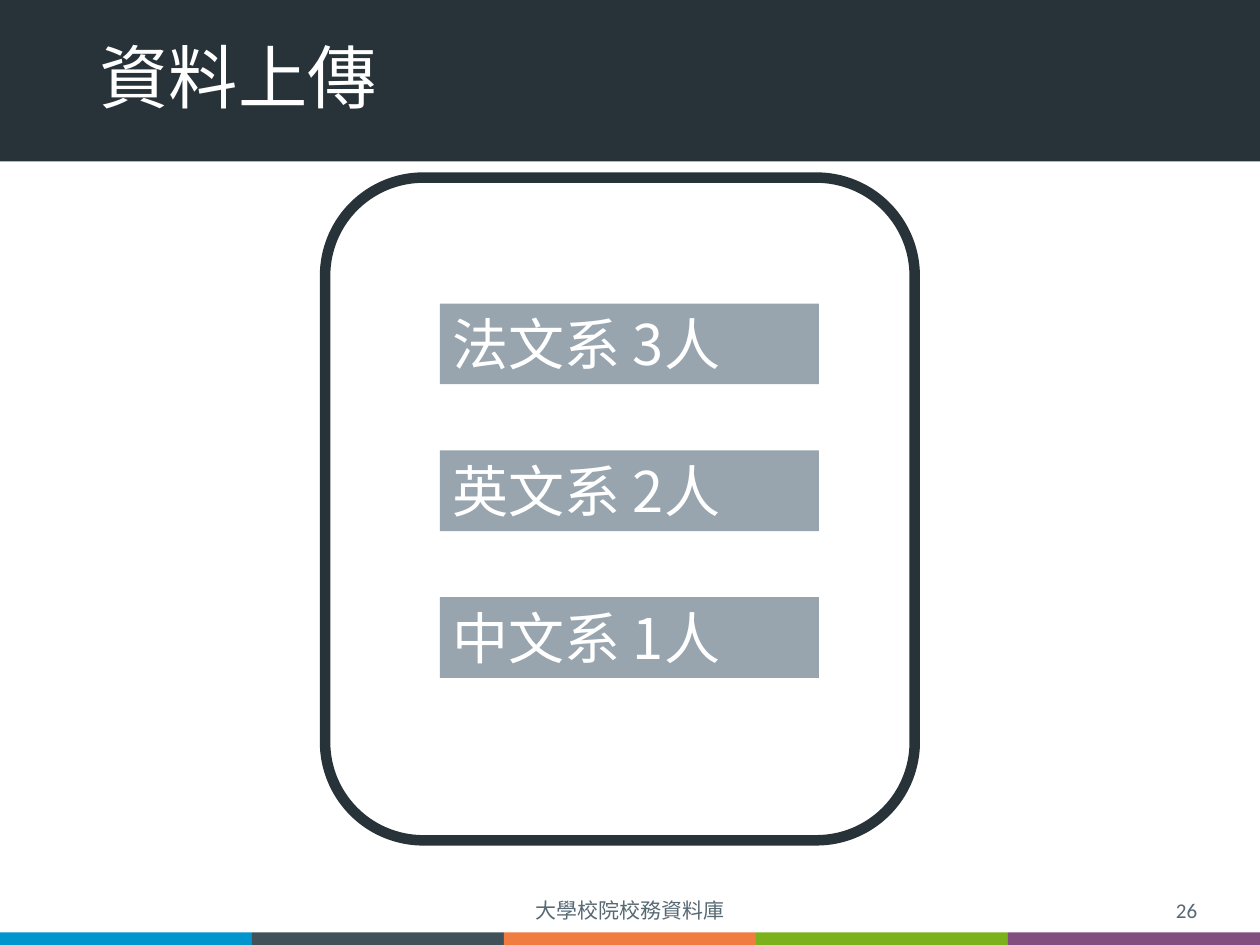
from lxml import etree
from pptx import Presentation
from pptx import util as u
from pptx.dml.color import RGBColor
from pptx.enum import shapes, text
from pptx.oxml.ns import qn

WHITE = RGBColor(0xFF, 0xFF, 0xFF)
DARK = RGBColor(0x27, 0x33, 0x39)
SLATE = RGBColor(0x32, 0x4D, 0x5E)
FOOTER_GREY = RGBColor(0x57, 0x69, 0x73)
STRIPE_COLOURS = [
    RGBColor(0x00, 0x95, 0xCD),
    RGBColor(0x40, 0x51, 0x5A),
    RGBColor(0xF1, 0x7C, 0x3F),
    RGBColor(0x7B, 0xB2, 0x1B),
    RGBColor(0x81, 0x4E, 0x7E),
]
CJK_FONT = "Noto Sans CJK SC"
WIDTH, HEIGHT = 10, 7.5
DEPARTMENTS = ["法文系 3人", "英文系 2人", "中文系 1人"]

TITLE_FORMAT = {"size": u.Pt(39.6), "name": "Calibri"}
FOOTER_FORMAT = {"size": u.Pt(12), "name": "Calibri"}
LABEL_FORMAT = {"size": u.Pt(32), "name": CJK_FONT}


def inches(box):
    return [u.Inches(length) for length in box]


def write(frame, words, font_format, colour, align, anchor):
    """Fill a text frame with one formatted paragraph."""
    frame.word_wrap = True
    frame.vertical_anchor = anchor
    paragraph = frame.paragraphs[0]
    paragraph.alignment = align
    run = paragraph.add_run()
    run.text = words
    for key, value in font_format.items():
        setattr(run.font, key, value)
    run.font.color.rgb = colour
    east_asian = etree.SubElement(run.font._element, qn("a:ea"))
    east_asian.set("typeface", CJK_FONT)
    return paragraph


def add_block(slide, box, colour, alpha=None):
    block = slide.shapes.add_shape(shapes.MSO_SHAPE.RECTANGLE, *inches(box))
    block.shadow.inherit = False
    block.line.fill.background()
    block.fill.solid()
    block.fill.fore_color.rgb = colour
    if alpha is not None:
        fill_colour = block._element.spPr.find(qn("a:solidFill"))[0]
        etree.SubElement(fill_colour, qn("a:alpha")).set("val", str(alpha * 1000))
    return block


def header(slide, box):
    left, top, width, height = box
    add_block(slide, box, DARK)
    title = slide.shapes.title
    slide.shapes._spTree.append(title._element)  # in front of the band
    title_box = inches((left + 0.069 * width, top + 0.28, 0.862 * width, 0.74))
    for side, length in zip(("left", "top", "width", "height"), title_box):
        setattr(title, side, length)
    line = write(title.text_frame, "資料上傳", TITLE_FORMAT, WHITE,
                 text.PP_ALIGN.LEFT, text.MSO_ANCHOR.MIDDLE)
    line.line_spacing = 0.9


def footer(slide, box):
    left, top, width, height = box
    stripe_width = width / len(STRIPE_COLOURS)
    for column, colour in enumerate(STRIPE_COLOURS):
        add_block(slide, (left + column * stripe_width, top + height - 0.1,
                          stripe_width, 0.1), colour)
    for words, start, share, align in (
        ("大學校院校務資料庫", 0.331, 0.338, text.PP_ALIGN.CENTER),
        ("26", 0.735, 0.225, text.PP_ALIGN.RIGHT),
    ):
        note = slide.shapes.add_textbox(
            *inches((left + start * width, top, share * width, 0.31)))
        write(note.text_frame, words, FOOTER_FORMAT, FOOTER_GREY,
              align, text.MSO_ANCHOR.MIDDLE)


def department_panel(slide, box):
    """Rounded frame around evenly spaced department labels."""
    left, top, _, _ = box
    row_pitch = 1.165
    for row, words in enumerate(DEPARTMENTS):
        label = add_block(slide, (left + 0.91, top + 1 + row * row_pitch,
                                  3.01, 0.64), SLATE, alpha=50)
        write(label.text_frame, words, LABEL_FORMAT, WHITE,
              text.PP_ALIGN.LEFT, text.MSO_ANCHOR.TOP)
    frame = slide.shapes.add_shape(shapes.MSO_SHAPE.ROUNDED_RECTANGLE, *inches(box))
    frame.shadow.inherit = False
    frame.fill.background()
    frame.line.color.rgb = DARK
    frame.line.width = u.Pt(6)


def main():
    deck = Presentation()
    deck.slide_width, deck.slide_height = inches((WIDTH, HEIGHT))
    slide = deck.slides.add_slide(deck.slide_layouts[5])
    header(slide, (0, -0.01, WIDTH, 1.29))
    footer(slide, (0, 7.07, WIDTH, HEIGHT - 7.07))
    department_panel(slide, (2.58, 1.41, 4.68, 5.26))
    deck.save("out.pptx")


if __name__ == "__main__":
    main()
